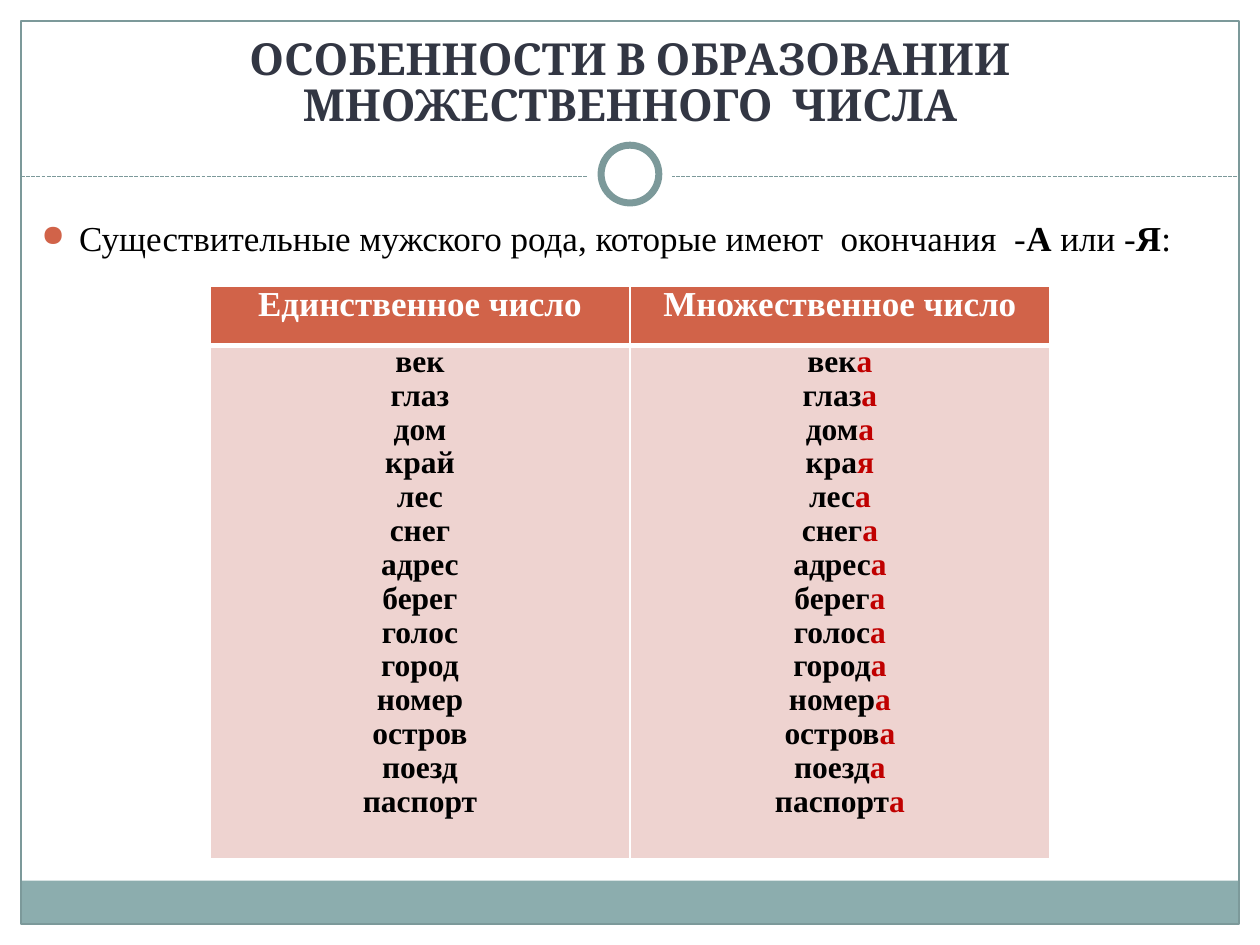
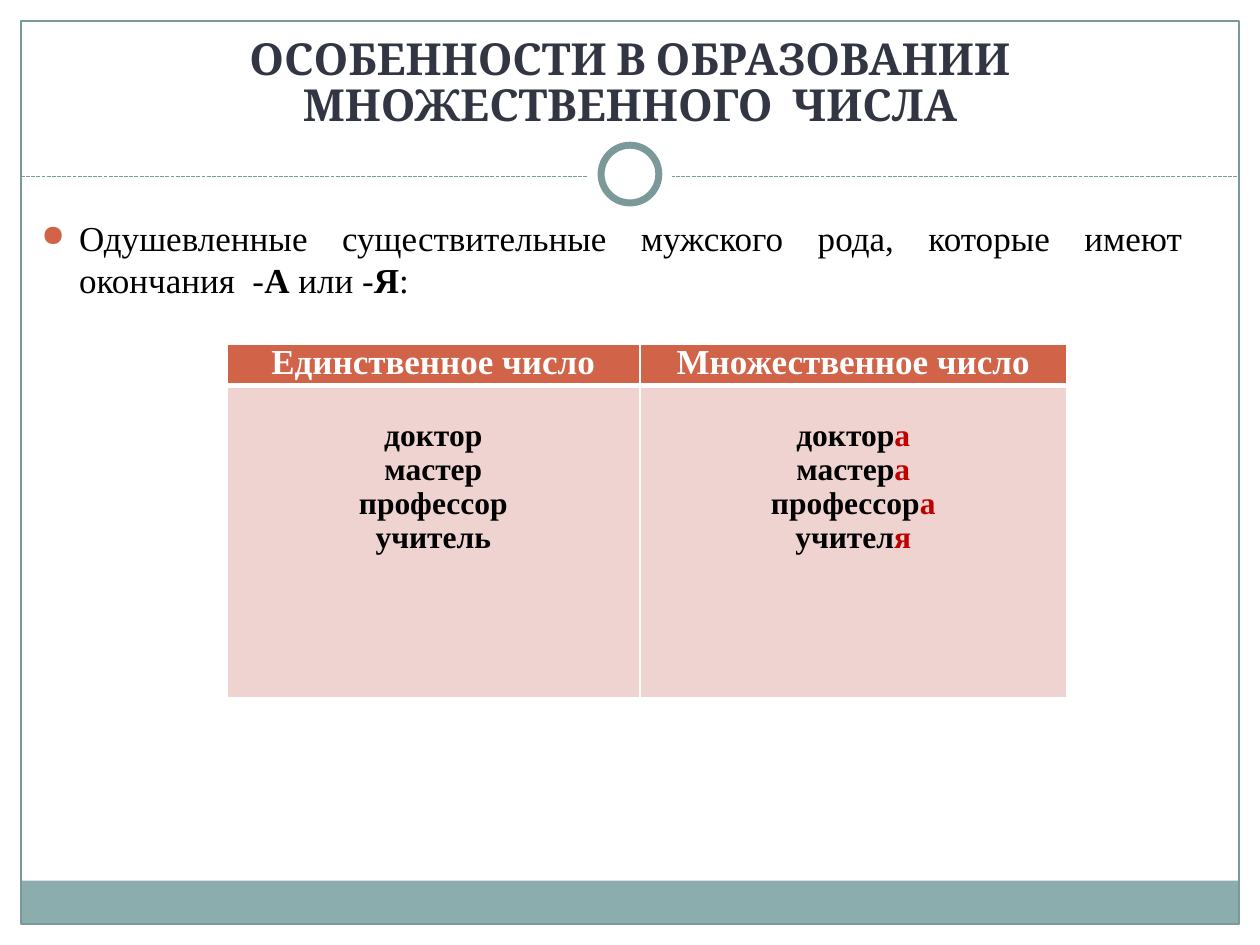
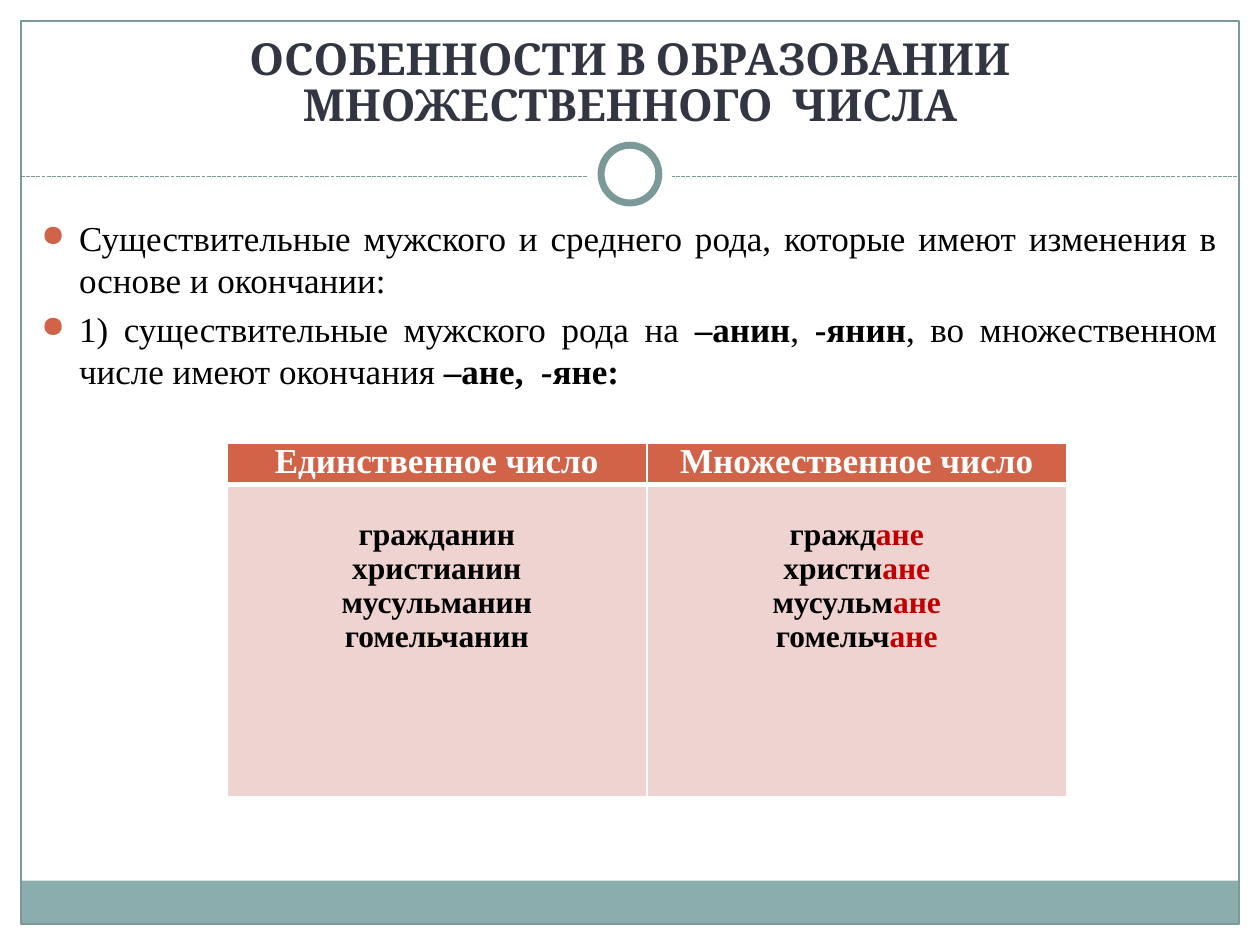
from lxml import etree
from pptx import Presentation
from pptx.dml.color import RGBColor
from pptx.enum.dml import MSO_LINE_DASH_STYLE as Dash
from pptx.enum.shapes import MSO_CONNECTOR_TYPE as Connector
from pptx.enum.shapes import MSO_SHAPE as Shape
from pptx.enum.text import MSO_ANCHOR as Anchor
from pptx.enum.text import PP_ALIGN as Align
from pptx.oxml.ns import qn
from pptx.util import Pt

COLORS = {
    "white": "FFFFFF",
    "band": "8CADAE",
    "frame": "7C999A",
    "title": "323643",
    "text": "000000",
    "accent": "D16349",
    "cell": "EED3D0",
    "ending": "C00000",
}
WIDTH, HEIGHT = 720, 540
TITLE = "ОСОБЕННОСТИ В ОБРАЗОВАНИИ МНОЖЕСТВЕННОГО  ЧИСЛА"
HEADERS = ("Единственное число", "Множественное число")
TITLE_FONT, BODY_FONT = "Cambria", "Times New Roman"

LESSONS = [
    {
        "rules": ["Существительные мужского рода, которые имеют  окончания  -*А* или -*Я*:"],
        "singular": "век глаз дом край лес снег адрес берег голос город номер остров поезд паспорт",
        "plural": "век*а глаз*а дом*а кра*я лес*а снег*а адрес*а берег*а голос*а город*а номер*а "
                  "остров*а поезд*а паспорт*а",
        "place": (120, 163.4), "columns": (240, 240), "rows": (34, 270), "top": 0,
    },
    {
        "rules": ["Одушевленные существительные мужского рода, которые имеют  окончания  -*А* или -*Я*:"],
        "singular": "доктор мастер профессор учитель",
        "plural": "доктор*а мастер*а профессор*а учител*я",
        "place": (129.6, 196.8), "columns": (236, 244), "rows": (23.6, 178.4), "top": 19.3,
    },
    {
        "rules": [
            "Существительные мужского и среднего рода, которые имеют изменения в основе и окончании:",
            "1) существительные мужского рода на *–анин*, *-янин*, во множественном числе "
            "имеют окончания *–ане,  -яне:*",
        ],
        "singular": "гражданин христианин мусульманин гомельчанин",
        "plural": "гражд*ане христи*ане мусульм*ане гомельч*ане",
        "place": (129.6, 253.4), "columns": (240, 240), "rows": (23.6, 178.4), "top": 19.3,
    },
]


def rgb(name):
    return RGBColor.from_string(COLORS[name])


class Deck:
    def __init__(self):
        self.presentation = Presentation()
        self.presentation.slide_width = Pt(WIDTH)
        self.presentation.slide_height = Pt(HEIGHT)
        self.slide = None

    def add_slide(self):
        self.slide = self.presentation.slides.add_slide(self.presentation.slide_layouts[6])
        self.shape(Shape.RECTANGLE, 11.5, 503.3, 696, 24.5, fill="band")
        self.shape(Shape.RECTANGLE, 12, 12, 696, 516, line="frame")
        self.dashed_line(12, 708, 100.8)
        self.circle(48)
        self.circle(33, line="frame", weight=4)

    def shape(self, kind, left, top, width, height, fill=None, line=None, weight=0.75):
        shape = self.slide.shapes.add_shape(kind, Pt(left), Pt(top), Pt(width), Pt(height))
        shape.shadow.inherit = False
        if fill:
            shape.fill.solid()
            shape.fill.fore_color.rgb = rgb(fill)
        else:
            shape.fill.background()
        if line:
            shape.line.color.rgb = rgb(line)
            shape.line.width = Pt(weight)
        else:
            shape.line.fill.background()

    def circle(self, size, **style):
        self.shape(Shape.OVAL, (WIDTH - size) / 2, 99.5 - size / 2, size, size, fill="white", **style)

    def dashed_line(self, left, right, top):
        line = self.slide.shapes.add_connector(Connector.STRAIGHT, Pt(left), Pt(top), Pt(right), Pt(top))
        line.line.color.rgb = rgb("frame")
        line.line.width = Pt(0.75)
        line.line.dash_style = Dash.SQUARE_DOT
        etree.SubElement(line._element.spPr, qn("a:effectLst"))

    def text_box(self, left, top, width, height):
        text_frame = self.slide.shapes.add_textbox(Pt(left), Pt(top), Pt(width), Pt(height)).text_frame
        text_frame.word_wrap = True
        return text_frame

    def run(self, paragraph, text, size, color="text", bold=False, font=BODY_FONT):
        run = paragraph.add_run()
        run.text = text
        run.font.name = font
        run.font.size = Pt(size)
        run.font.bold = bold
        run.font.color.rgb = rgb(color)

    def title(self, text):
        text_frame = self.text_box(24, 18, 672, 60)
        text_frame.vertical_anchor = Anchor.BOTTOM
        paragraph = text_frame.paragraphs[0]
        paragraph.alignment = Align.CENTER
        paragraph.line_spacing = 0.87
        self.run(paragraph, text, 25.2, "title", True, TITLE_FONT)

    def bullet(self, paragraph):
        properties = paragraph._p.get_or_add_pPr()
        properties.set("marL", str(Pt(21.6)))
        properties.set("indent", str(Pt(-21.6)))
        color = etree.SubElement(properties, qn("a:buClr"))
        etree.SubElement(color, qn("a:srgbClr"), val=COLORS["accent"])
        etree.SubElement(properties, qn("a:buSzPct"), val="85000")
        etree.SubElement(properties, qn("a:buChar"), char="●")

    def rules(self, texts):
        text_frame = self.text_box(16.5, 120.2, 686, 360)
        for index, text in enumerate(texts):
            paragraph = text_frame.add_paragraph() if index else text_frame.paragraphs[0]
            self.bullet(paragraph)
            paragraph.alignment = Align.JUSTIFY
            paragraph.line_spacing = Pt(24)
            if index:
                paragraph.space_before = Pt(4)
            for part, piece in enumerate(text.split("*")):
                if piece:
                    self.run(paragraph, piece, 20, bold=part % 2 == 1)

    def borders(self, cell, bottom):
        properties = cell._tc.get_or_add_tcPr()
        for index, (side, weight) in enumerate((("L", 1), ("R", 1), ("T", 1), ("B", bottom))):
            line = etree.Element(qn(f"a:ln{side}"), w=str(Pt(weight)))
            fill = etree.SubElement(line, qn("a:solidFill"))
            etree.SubElement(fill, qn("a:srgbClr"), val=COLORS["white"])
            properties.insert(index, line)

    def cell(self, cell, words, size, color, fill, top=0, bottom=1):
        cell.margin_left = cell.margin_right = Pt(5)
        cell.margin_top, cell.margin_bottom = Pt(top), Pt(0)
        cell.fill.solid()
        cell.fill.fore_color.rgb = rgb(fill)
        self.borders(cell, bottom)
        for index, word in enumerate(words):
            paragraph = cell.text_frame.add_paragraph() if index else cell.text_frame.paragraphs[0]
            paragraph.alignment = Align.CENTER
            paragraph.line_spacing = 0.97
            stem, _, ending = word.partition("*")
            self.run(paragraph, stem, size, color, True)
            if ending:
                self.run(paragraph, ending, size, "ending", True)

    def word_table(self, lesson):
        columns, rows = lesson["columns"], lesson["rows"]
        left, top = lesson["place"]
        table = self.slide.shapes.add_table(
            2, 2, Pt(left), Pt(top), Pt(sum(columns)), Pt(sum(rows))).table
        for row, height in zip(table.rows, rows):
            row.height = Pt(height)
        for index, key in enumerate(("singular", "plural")):
            table.columns[index].width = Pt(columns[index])
            self.cell(table.cell(0, index), [HEADERS[index]], 20, "white", "accent", bottom=3)
            self.cell(table.cell(1, index), lesson[key].split(), 18, "text", "cell", lesson["top"])
            table.cell(1, index).vertical_anchor = Anchor.TOP


def main():
    deck = Deck()
    for lesson in LESSONS:
        deck.add_slide()
        deck.title(TITLE)
        deck.rules(lesson["rules"])
        deck.word_table(lesson)
    deck.presentation.save("out.pptx")


if __name__ == "__main__":
    main()
